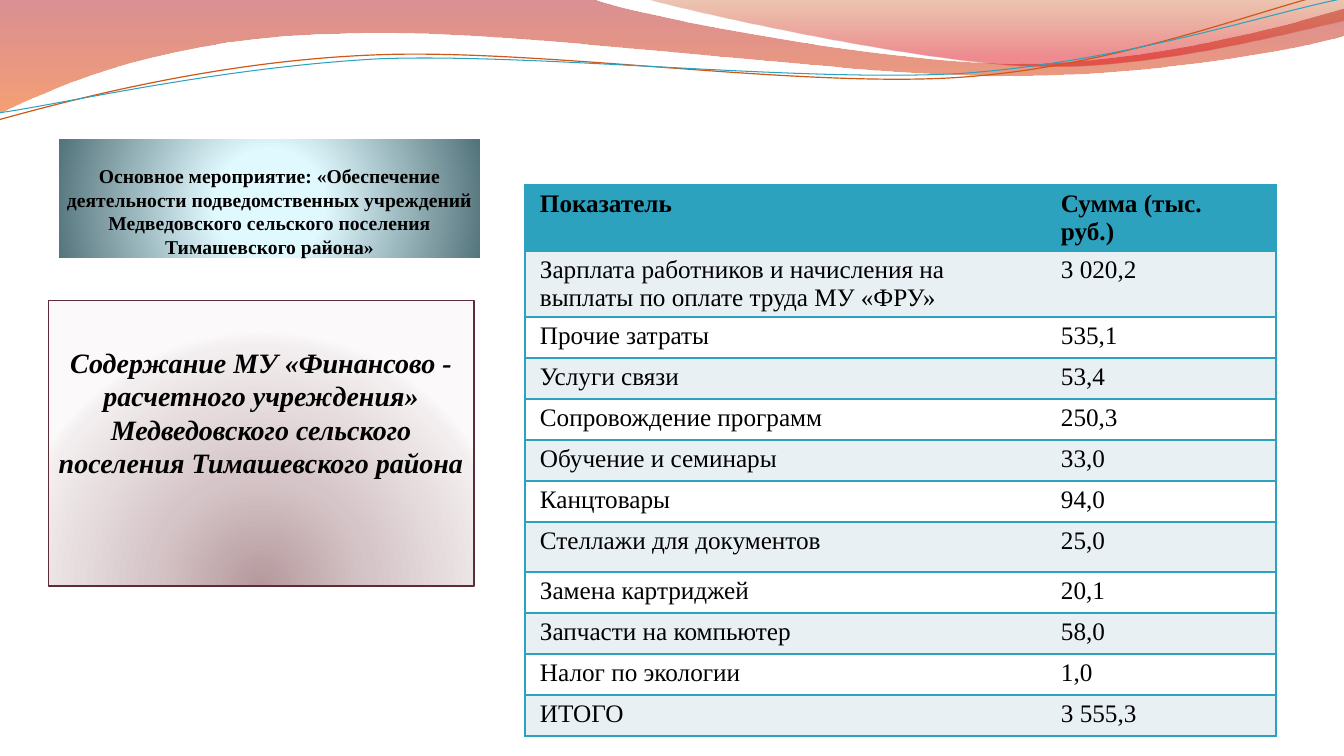
from lxml import etree
from pptx import Presentation, util as u
from pptx.dml.color import RGBColor
from pptx.enum import shapes, text
from pptx.oxml import parse_xml
from pptx.oxml.ns import qn

PX = 914400 / 100.8
FONT = "Times New Roman"
NS = 'xmlns:a="http://schemas.openxmlformats.org/drawingml/2006/main"'
COLORS = {
    "text": "000000", "teal": "2DA2BF", "band": "E8F0F4", "plain": "FFFFFF",
    "orange": "CF5818", "wine": "5D2C36",
}
# Gradient stops: position %, colour, opacity %
RED_WAVE = [(0, "AF0911", 45), (100, "EE5300", 55)]
ORANGE_WAVE = [(0, "C24400", 30), (80, "DC000B", 45)]
ICE = [(0, "E1FAFF", 100), (25, "E0F9FF", 100), (100, "54747B", 100)]
ROSE = [(0, "B5999D", 100), (43, "D6C5C8", 100), (93, "F2EDEE", 100), (100, "FBF9F9", 100)]

COSTS = [
    ("Показатель", "Сумма (тыс. руб.)"),
    ("Зарплата работников и начисления на выплаты по оплате труда МУ «ФРУ»", "3 020,2"),
    ("Прочие затраты", "535,1"),
    ("Услуги связи", "53,4"),
    ("Сопровождение программ", "250,3"),
    ("Обучение и семинары", "33,0"),
    ("Канцтовары", "94,0"),
    ("Стеллажи для документов", "25,0"),
    ("Замена картриджей", "20,1"),
    ("Запчасти на компьютер", "58,0"),
    ("Налог по экологии", "1,0"),
    ("ИТОГО", "3 555,3"),
]
ROW_HEIGHT = 41
TALL_ROWS = {0: 66, 1: 66, 7: 50}


def px(n):
    return u.Emu(round(n * PX))


def rgb(name):
    return RGBColor.from_string(COLORS[name])


def gradient(shape, stops, focus=None):
    """Linear top-down gradient, or a circular one around focus (l, t, r, b in %)."""
    shape.fill.solid()
    solid = shape._element.spPr.find(qn("a:solidFill"))
    marks = "".join(
        f'<a:gs pos="{pos * 1000}"><a:srgbClr val="{color}">'
        f'<a:alpha val="{alpha * 1000}"/></a:srgbClr></a:gs>' for pos, color, alpha in stops)
    if focus:
        sides = " ".join(f'{side}="{pct * 1000}"' for side, pct in zip("ltrb", focus))
        way = f'<a:path path="circle"><a:fillToRect {sides}/></a:path>'
    else:
        way = '<a:lin ang="5400000" scaled="0"/>'
    solid.getparent().replace(
        solid, parse_xml(f"<a:gradFill {NS}><a:gsLst>{marks}</a:gsLst>{way}</a:gradFill>"))


def write(paragraph, words, size, bold=False, italic=False):
    run = paragraph.add_run()
    run.text = words
    font = run.font
    font.name, font.size, font.bold, font.italic = FONT, u.Pt(size), bold, italic
    font.color.rgb = rgb("text")


def outline(slide, box, start, segments, close):
    """A segment of two numbers is a straight end, one of six a Bezier curve."""
    left, top = box[:2]
    points = [start]
    for segment in segments:
        points += zip(segment[::2], segment[1::2])
    points = [(px(left + x), px(top + y)) for x, y in points]
    builder = slide.shapes.build_freeform(*points[0], scale=1.0)
    builder.add_line_segments(points[1:], close=close)
    shape = builder.convert_to_shape()
    shape.shadow.inherit = False
    # Join each triple of points into one curve
    ends = iter(list(shape._element.iter(qn("a:lnTo"))))
    for segment in segments:
        first = next(ends)
        if len(segment) == 6:
            first.tag = qn("a:cubicBezTo")
            for follower in (next(ends), next(ends)):
                first.append(follower[0])
                follower.getparent().remove(follower)
    return shape


def add_waves(slide, box):
    # Filled bands
    bands = [
        (RED_WAVE, (-1, 0), [
            (592, -1), (639, 17, 892, 64, 1019, 64), (1147, 64, 1288, 26, 1344, 9),
            (1346, 36), (1321, 44, 1169, 77, 1002, 76), (836, 76, 513, 28, 346, 34),
            (173, 36, 61, 84, -1, 114)]),
        (ORANGE_WAVE, (644, -1), [
            (684, 11, 916, 62, 1033, 66), (1150, 70, 1292, 32, 1344, 21), (1344, 0)]),
    ]
    for stops, start, segments in bands:
        band = outline(slide, box, start, segments, True)
        gradient(band, stops)
        band.line.fill.background()
    # Thin lines, slightly turned
    strands = [
        ("orange", 0.85, (-3, 88), [
            (64, 73, 213, 40, 372, 41), (532, 41, 794, 94, 957, 91),
            (1118, 88, 1264, 36, 1344, 22)]),
        ("teal", 0.75, (-2, 81), [
            (63, 75, 220, 46, 381, 45), (541, 47, 801, 89, 962, 87),
            (1123, 83, 1266, 42, 1347, 30)]),
    ]
    for color, width, start, segments in strands:
        strand = outline(slide, box, start, segments, False)
        strand.rotation = 357.3
        strand.fill.background()
        strand.line.color.rgb = rgb(color)
        strand.line.width = u.Pt(width)


def add_panel(slide, box, words, size, stops, focus, margins, anchor, italic=False, border=None):
    panel = slide.shapes.add_shape(shapes.MSO_SHAPE.RECTANGLE, *map(px, box))
    panel.shadow.inherit = False
    gradient(panel, stops, focus)
    if border:
        panel.line.color.rgb = rgb(border)
        panel.line.width = u.Pt(0.75)
    else:
        panel.line.fill.background()
    frame = panel.text_frame
    frame.word_wrap = True
    frame.vertical_anchor = anchor
    frame.margin_left, frame.margin_top, frame.margin_right, frame.margin_bottom = map(px, margins)
    paragraph = frame.paragraphs[0]
    paragraph.alignment = text.PP_ALIGN.CENTER
    write(paragraph, words, size, True, italic)


def add_borders(cell, sides):
    props = cell._tc.get_or_add_tcPr()
    for side in "LRTB":
        line = etree.SubElement(props, qn(f"a:ln{side}"), w="12700" if side in sides else "0")
        if side in sides:
            fill = etree.SubElement(line, qn("a:solidFill"))
            etree.SubElement(fill, qn("a:srgbClr"), val=COLORS["teal"])
        else:
            etree.SubElement(line, qn("a:noFill"))


def add_costs(slide, box):
    table = slide.shapes.add_table(len(COSTS), 2, *map(px, box)).table
    table.first_row = table.horz_banding = False
    # Plain style without a grid
    table._tbl.tblPr[0].text = "{2D5ABB26-0587-4C30-8999-92F81FD0307C}"
    amount_width = 230
    table.columns[0].width = px(box[2] - amount_width)
    table.columns[1].width = px(amount_width)
    for r, row in enumerate(COSTS):
        table.rows[r].height = px(TALL_ROWS.get(r, ROW_HEIGHT))
        color = "teal" if r == 0 else "band" if r % 2 else "plain"
        for c, words in enumerate(row):
            cell = table.cell(r, c)
            add_borders(cell, "RTB" if c else "LTB")
            cell.fill.solid()
            cell.fill.fore_color.rgb = rgb(color)
            cell.margin_left = cell.margin_right = px(15)
            cell.margin_top = cell.margin_bottom = px(5)
            write(cell.text_frame.paragraphs[0], words, 18, r == 0)


def main():
    deck = Presentation()
    deck.slide_width, deck.slide_height = px(1344), px(756)
    slide = deck.slides.add_slide(deck.slide_layouts[6])
    add_waves(slide, (0, 0, 1344, 120))
    # Heading
    add_panel(slide, (59, 139, 421, 119),
              "Основное мероприятие: «Обеспечение деятельности подведомственных учреждений "
              "Медведовского сельского поселения Тимашевского района»",
              14, ICE, (10, 110, 10, 100), (0, 5, 0, 0), text.MSO_ANCHOR.BOTTOM)
    # Purpose of the spending
    add_panel(slide, (48, 300, 426, 286),
              "Содержание МУ «Финансово - расчетного учреждения» "
              "Медведовского сельского поселения Тимашевского района",
              20, ROSE, (50, 130, 50, -30), (2, 45, 2, 5), text.MSO_ANCHOR.TOP,
              italic=True, border="wine")
    add_costs(slide, (525, 185, 751, 551))
    deck.save("out.pptx")


if __name__ == "__main__":
    main()
